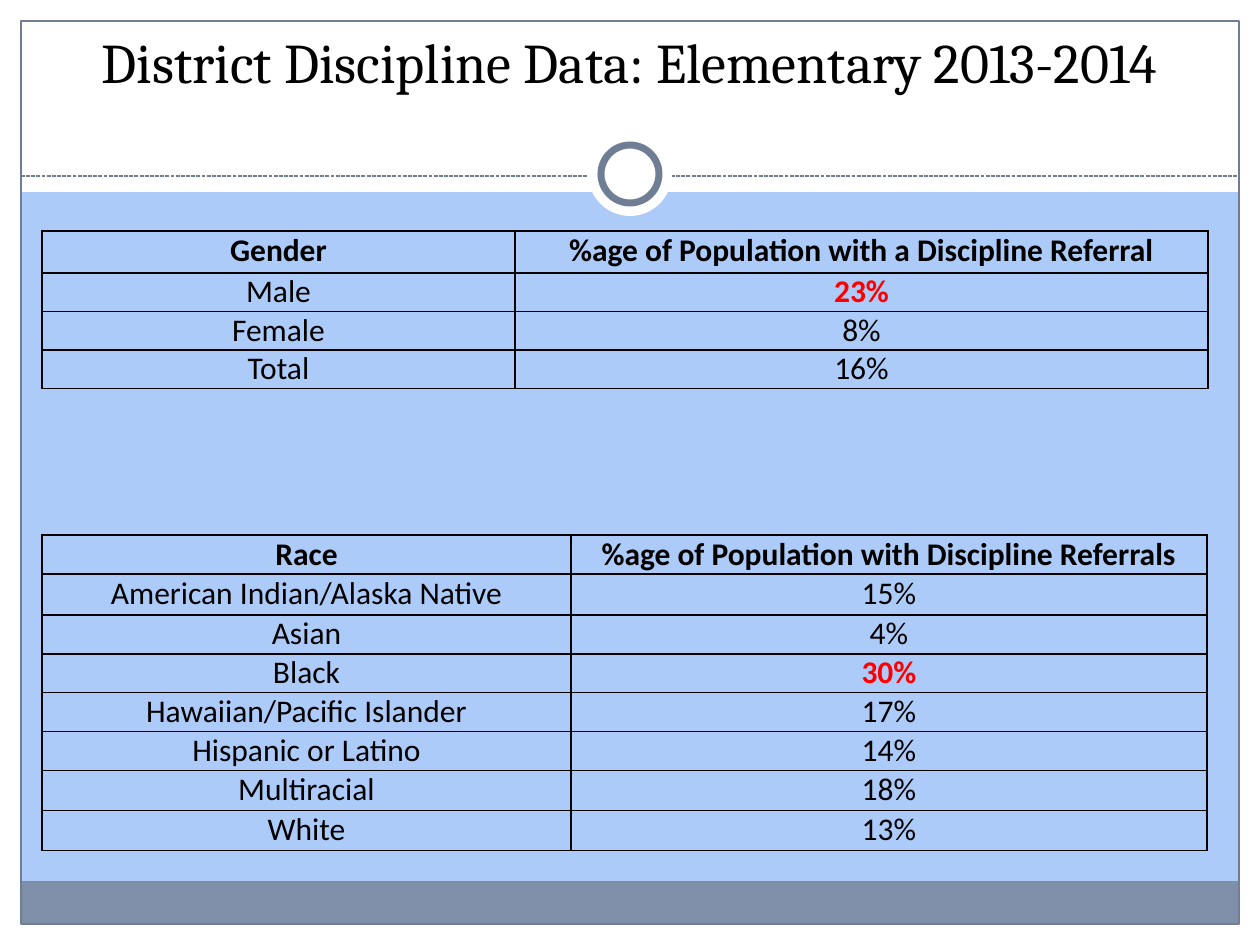
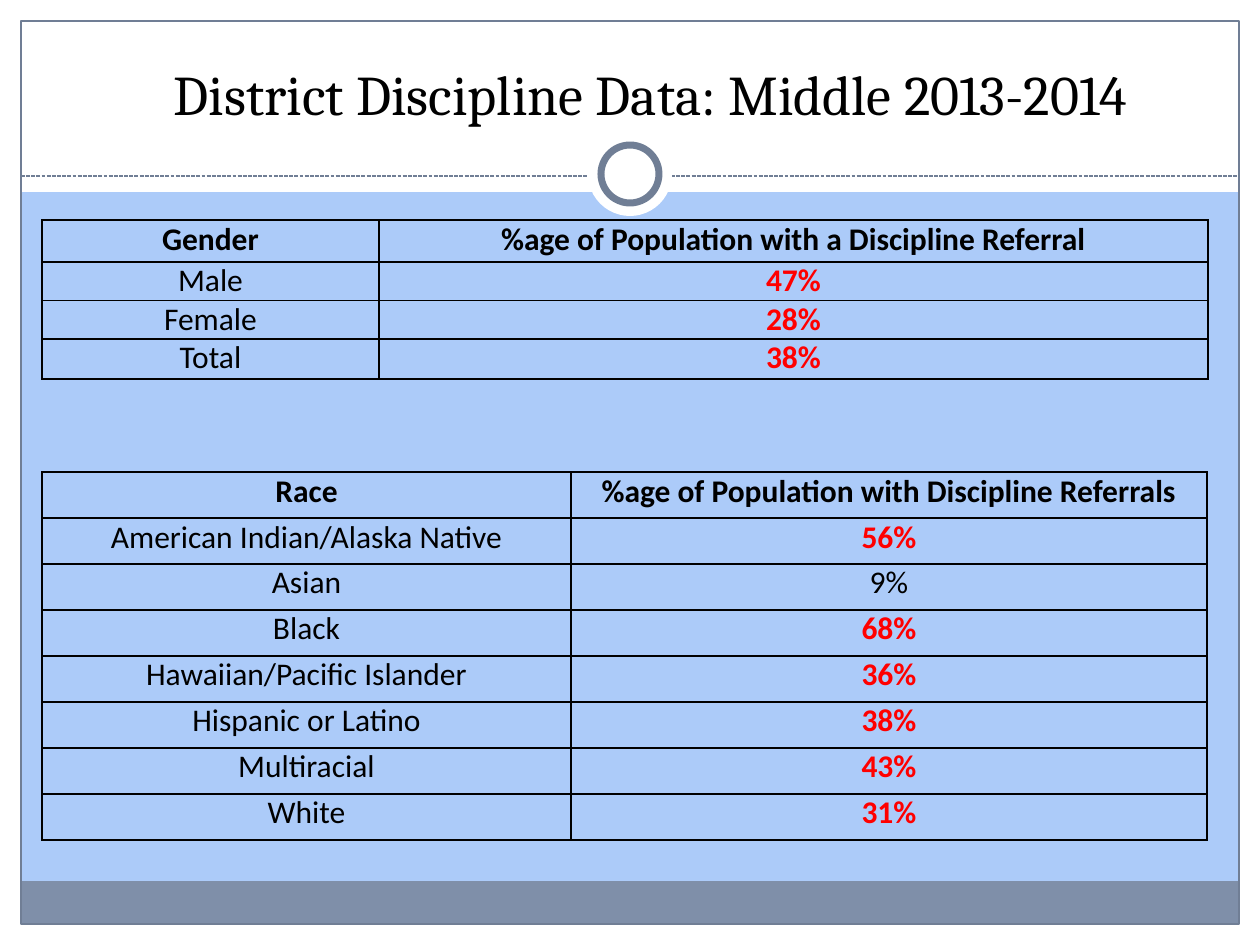
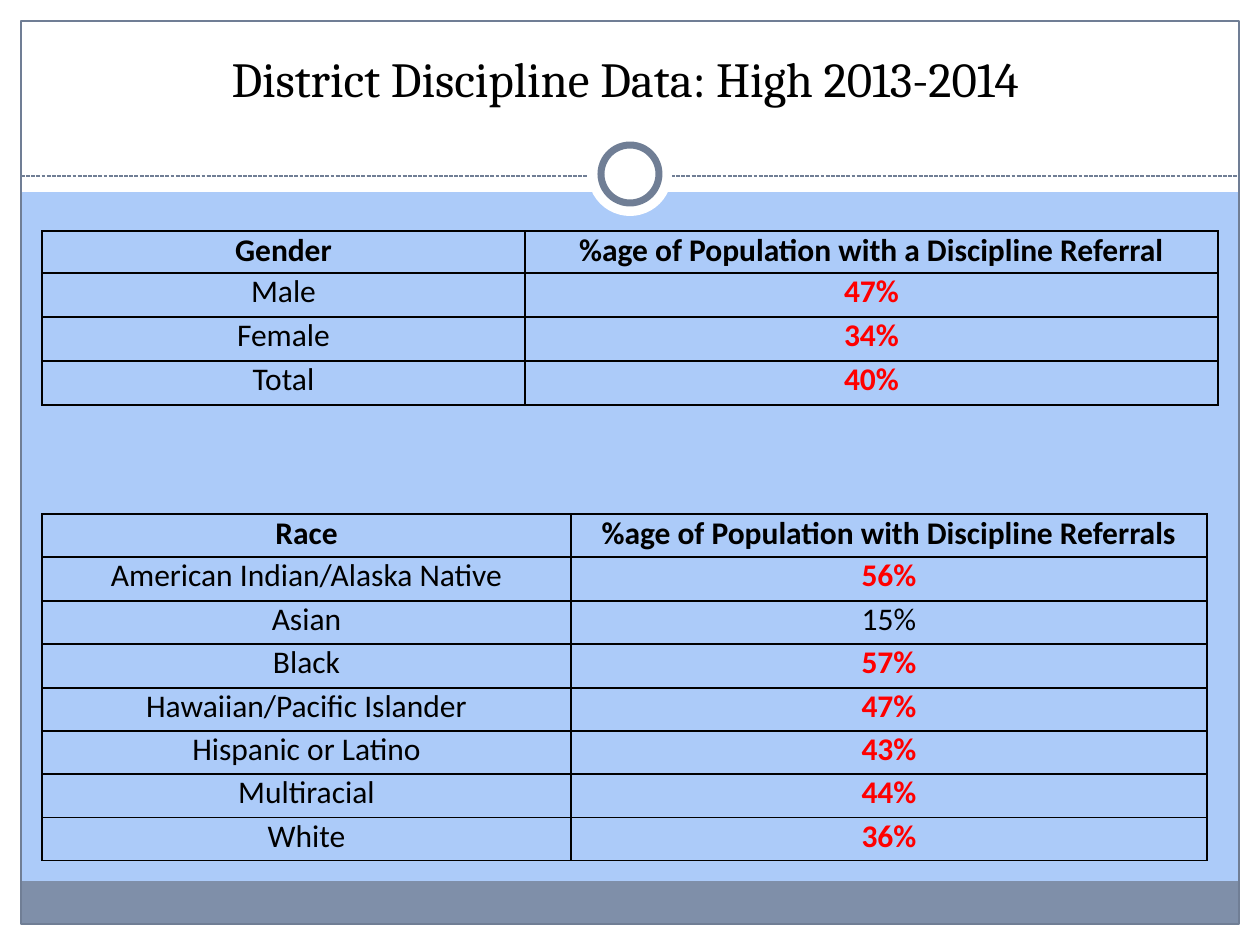
from lxml.etree import SubElement
from pptx import Presentation
from pptx.dml.color import RGBColor
from pptx.enum.dml import MSO_LINE as Dash
from pptx.enum.shapes import MSO_CONNECTOR as Conn, MSO_SHAPE as Kind
from pptx.enum.text import MSO_AUTO_SIZE as Fit, PP_ALIGN as Align
from pptx.oxml import parse_xml
from pptx.oxml.ns import nsdecls, qn
from pptx.util import Emu, Pt

# Shared look
HUE = {"sky": "ACCBF9", "white": "FFFFFF", "slate": "7F8FA9",
       "edge": "707E95", "ink": "000000", "alert": "FF0000"}
WIDE, HIGH, RIM = 1260, 945, 21
LEFT, PAD = 42, 9
LIMIT = 20  # shares above this are flagged in red

# Table wording
SEXES = ["Male", "Female", "Total"]
RACES = ["American Indian/Alaska Native", "Asian", "Black",
         "Hawaiian/Pacific Islander", "Hispanic or Latino",
         "Multiracial", "White"]
SEX_HEAD = ("Gender", "%age of Population with a Discipline Referral")
RACE_HEAD = ("Race", "%age of Population with Discipline Referrals")
RACE_COLS = (529, 636)


def px(num):
    return Emu(round(num * 914400 / 126))


def rgb(name):
    return RGBColor.from_string(HUE[name])


def even(total, count):
    """Split a height into whole-pixel rows."""
    cuts = [round(total * i / count) for i in range(count + 1)]
    return [low - top for top, low in zip(cuts, cuts[1:])]


def put(frame, text, size=18, font="Calibri", hue="ink", bold=False):
    para = frame.paragraphs[0]
    para.alignment = Align.CENTER
    run = para.add_run()
    run.text = text
    run.font.size = Pt(size)
    run.font.name = font
    run.font.bold = bold
    run.font.color.rgb = rgb(hue)


def block(slide, box, fill=None, line=None, width=0.75, kind=Kind.RECTANGLE):
    shape = slide.shapes.add_shape(kind, *map(px, box))
    shape.shadow.inherit = False
    if fill:
        shape.fill.solid()
        shape.fill.fore_color.rgb = rgb(fill)
    else:
        shape.fill.background()
    if line:
        shape.line.color.rgb = rgb(line)
        shape.line.width = Pt(width)
    else:
        shape.line.fill.background()


def rule(slide, left, right, y):
    line = slide.shapes.add_connector(
        Conn.STRAIGHT, px(left), px(y), px(right), px(y))
    line.line.color.rgb = rgb("edge")
    line.line.width = Pt(0.75)
    line.line.dash_style = Dash.SQUARE_DOT
    SubElement(line._element.spPr, qn("a:effectLst"))


def base(deck):
    """Add a slide with the bands, border and ring."""
    slide = deck.slides.add_slide(deck.slide_layouts[6])
    back = slide.background.fill
    back.solid()
    back.fore_color.rgb = rgb("sky")
    for box in ((0, HIGH - RIM, WIDE, RIM), (0, 0, WIDE, 192),
                (0, 0, RIM, HIGH), (WIDE - RIM, 0, RIM, HIGH)):
        block(slide, box, fill="white")
    block(slide, (RIM, 881, WIDE - 2 * RIM, 43), fill="slate")
    block(slide, (RIM, RIM, WIDE - 2 * RIM, HIGH - 2 * RIM), line="edge")
    rule(slide, RIM, WIDE - RIM, 176)
    block(slide, (588, 132, 84, 84), fill="white", kind=Kind.OVAL)
    block(slide, (601, 145, 58, 58), fill="white", line="edge", width=4,
          kind=Kind.OVAL)
    return slide


def title(slide, text, box, size):
    frame = slide.shapes.add_textbox(*map(px, box)).text_frame
    frame.word_wrap = True
    frame.auto_size = Fit.SHAPE_TO_FIT_TEXT
    put(frame, text, size=size, font="Cambria")


def edge(cell):
    props = cell._tc.get_or_add_tcPr()
    for spot, side in enumerate("LRTB"):
        props.insert(spot, parse_xml(
            f'<a:ln{side} {nsdecls("a")} w="12700"><a:solidFill>'
            f'<a:srgbClr val="{HUE["ink"]}"/></a:solidFill></a:ln{side}>'))


def fill_cell(cell, text, **fmt):
    cell.margin_left = cell.margin_right = px(PAD)
    cell.margin_top = cell.margin_bottom = 0
    cell.fill.background()
    edge(cell)
    put(cell.text_frame, text, **fmt)


def grid(slide, head, names, rates, top, cols, rows):
    table = slide.shapes.add_table(
        len(rows), len(cols), px(LEFT), px(top),
        px(sum(cols)), px(sum(rows))).table
    table.first_row = table.horz_banding = False
    for col, width in zip(table.columns, cols):
        col.width = px(width)
    for row, height in zip(table.rows, rows):
        row.height = px(height)
    for c, text in enumerate(head):
        fill_cell(table.cell(0, c), text, bold=True)
    for r, (name, rate) in enumerate(zip(names, rates), 1):
        high = rate > LIMIT
        fill_cell(table.cell(r, 0), name)
        fill_cell(table.cell(r, 1), f"{rate}%", bold=high,
                  hue="alert" if high else "ink")


def page(deck, level, box, size, sex, race):
    slide = base(deck)
    grid(slide, SEX_HEAD, SEXES, **sex)
    grid(slide, RACE_HEAD, RACES, cols=RACE_COLS, **race)
    title(slide, f"District Discipline Data: {level} 2013-2014", box, size)


def main():
    deck = Presentation()
    deck.slide_width, deck.slide_height = px(WIDE), px(HIGH)

    # Elementary
    page(deck, "Elementary", (21, 21, 1218, 81), 32,
         sex=dict(rates=[23, 8, 16], top=231, cols=(473, 693),
                  rows=[42, 38, 38, 38]),
         race=dict(rates=[15, 4, 30, 17, 14, 18, 13], top=535,
                   rows=[39, 41, 39, 38, 39, 39, 40, 40]))

    # Middle
    page(deck, "Middle", (63, 53, 1176, 81), 32,
         sex=dict(rates=[47, 28, 38], top=220, cols=(337, 829),
                  rows=[42, 38, 38, 40]),
         race=dict(rates=[56, 9, 68, 36, 38, 43, 31], top=472,
                   rows=even(368, 8)))

    # High
    page(deck, "High", (74, 42, 1102, 72), 28,
         sex=dict(rates=[47, 34, 40], top=231, cols=(483, 693),
                  rows=[42, 44, 44, 44]),
         race=dict(rates=[56, 15, 57, 47, 43, 44, 36], top=514,
                   rows=even(347, 8)))

    deck.save("out.pptx")


if __name__ == "__main__":
    main()
